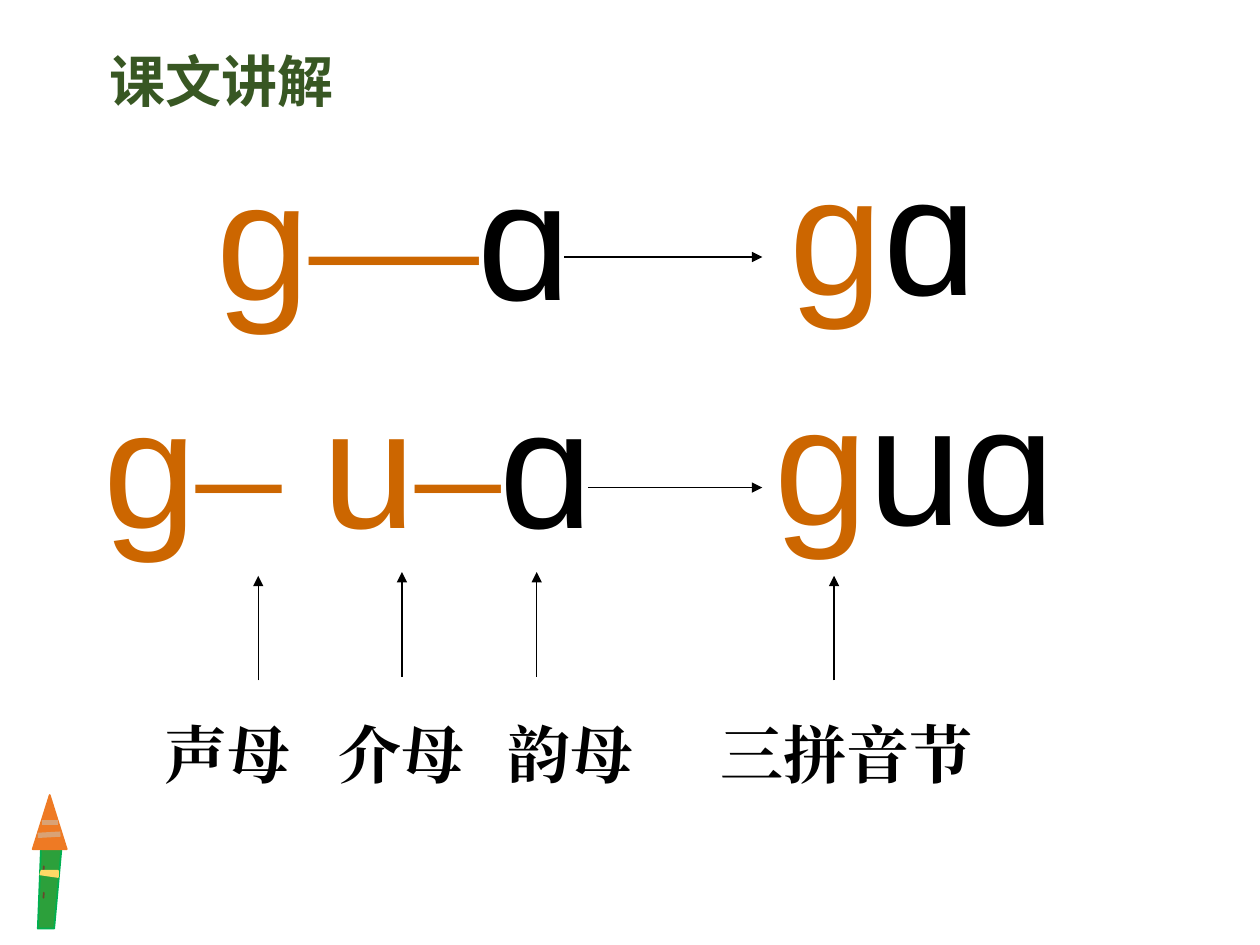
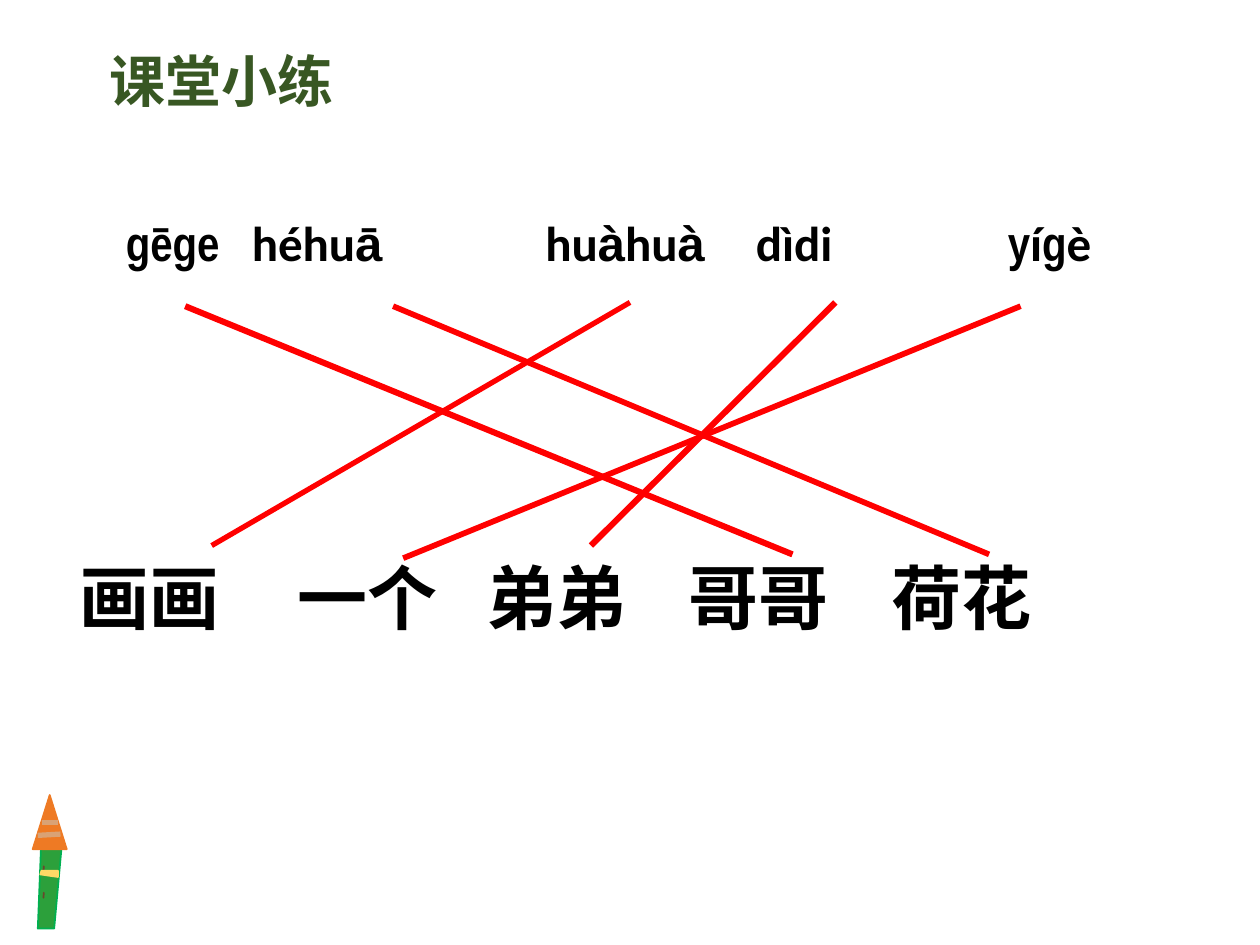
from lxml import etree
from pptx import Presentation
from pptx import util as u
from pptx.dml.color import RGBColor
from pptx.enum import shapes as s
from pptx.oxml import ns

HUE = {
    "title": "385723", "ink": "000000", "sound": "CC6600", "match": "FF0000",
    "body": "2CA03B", "edge": "00B050", "tip": "EE7A24", "mark": "69482C",
    "band": "FFD966", "wood": "D9A275",
}
SANS, SERIF, HAN = "Arial", "Times New Roman", "Noto Sans CJK SC"
THIN, SOFT = "Arial Narrow", "Calibri"

TITLE = {"size": u.Pt(32), "bold": True}
SOUND = {"size": u.Pt(96)}
LABEL = {"size": u.Pt(36), "bold": True}
PINYIN = {"size": u.Pt(28), "bold": True}
WORD = {"size": u.Pt(40), "bold": True}


def color(name):
    return RGBColor.from_string(HUE[name])


def add_text(slide, left, top, width, height, runs, style):
    """Write one line of text; runs holds (text, font, colour) triples."""
    box = slide.shapes.add_textbox(*map(u.Inches, (left, top, width, height)))
    box.text_frame.word_wrap = True
    line = box.text_frame.paragraphs[0]
    for words, face, hue in runs:
        run = line.add_run()
        run.text = words
        for key, value in {**style, "name": face}.items():
            setattr(run.font, key, value)
        run.font.color.rgb = color(hue)
        asian = etree.SubElement(run._r.get_or_add_rPr(), ns.qn("a:ea"))
        asian.set("typeface", face)


def add_line(slide, start, end, hue, width, arrow=False):
    ends = map(u.Inches, (*start, *end))
    link = slide.shapes.add_connector(s.MSO_CONNECTOR.STRAIGHT, *ends)
    link.line.color.rgb = color(hue)
    link.line.width = u.Pt(width)
    if arrow:
        head = etree.SubElement(link.line._get_or_add_ln(), ns.qn("a:tailEnd"))
        head.set("type", "triangle")
    etree.SubElement(link._element.spPr, ns.qn("a:effectLst"))


def paint(shape, fill, edge):
    shape.shadow.inherit = False
    shape.fill.solid()
    shape.fill.fore_color.rgb = color(fill)
    shape.line.color.rgb = color(edge)
    shape.line.width = u.Pt(1)


def add_outline(slide, points, fill, edge):
    first, *rest = [(u.Inches(x), u.Inches(y)) for x, y in points]
    pen = slide.shapes.build_freeform(*first)
    pen.add_line_segments(rest, close=True)
    paint(pen.convert_to_shape(), fill, edge)


def add_preset(slide, kind, left, top, width, height, hue):
    box = map(u.Inches, (left, top, width, height))
    shape = slide.shapes.add_shape(kind, *box)
    paint(shape, hue, hue)
    return shape


def add_mark(slide, top):
    mark = add_preset(slide, s.MSO_SHAPE.CHORD, 0.26, top, 0.26, 0.09, "mark")
    mark.rotation = 90
    for spot, angle in enumerate((89.45, 132.13)):
        mark.adjustments[spot] = angle * 0.6  # 60000 units a degree


def add_crayon(slide):
    body = [(0.33, 6.61), (0.49, 6.71), (0.43, 7.37), (0.3, 7.37)]
    band = [(0.33, 6.91), (0.46, 6.91), (0.46, 6.96), (0.32, 6.94)]
    add_outline(slide, body, "body", "edge")
    add_preset(slide, s.MSO_SHAPE.ISOSCELES_TRIANGLE,
               0.26, 6.31, 0.27, 0.43, "tip")
    add_mark(slide, 6.87)
    add_outline(slide, band, "band", "band")
    add_mark(slide, 7.08)
    add_line(slide, (0.33, 6.53), (0.46, 6.53), "wood", 3)
    add_line(slide, (0.3, 6.63), (0.48, 6.62), "wood", 3)


def add_page(deck, title):
    slide = deck.slides.add_slide(deck.slide_layouts[6])
    add_crayon(slide)
    add_text(slide, 0.77, 0.32, 2.4, 0.64, [(title, HAN, "title")], TITLE)
    return slide


def add_lesson(deck):
    slide = add_page(deck, "课文讲解")
    lead, final = ("ɡ", SANS, "sound"), ("ɑ", SANS, "ink")
    dash = ("–", SERIF, "sound")
    sums = [
        (1.62, 1, 3.4, [lead, ("—", SERIF, "sound"), final]),
        (0.72, 2.81, 4.8, [lead, ("– ", SERIF, "sound"),
                           ("u", SANS, "sound"), dash, final]),
        (6.17, 0.96, 2.2, [lead, final]),
        (6.05, 2.79, 2.9, [lead, ("uɑ", SANS, "ink")]),
    ]
    for left, top, width, runs in sums:
        add_text(slide, left, top, width, 1.72, runs, SOUND)

    labels = [(1.21, "声母"), (2.59, "介母"), (3.93, "韵母"), (5.62, "三拼音节")]
    for left, name in labels:
        width = len(name) * 0.5 + 0.3
        add_text(slide, left, 5.63, width, 0.71, [(name, SERIF, "ink")], LABEL)

    for left, y in [(4.48, 2.04), (4.67, 3.87)]:
        add_line(slide, (left, y), (6.05, y), "ink", 0.75, True)
    for x, foot in [(2.05, 5.4), (3.19, 5.37), (4.26, 5.37), (6.62, 5.4)]:
        add_line(slide, (x, foot), (x, foot - 0.83), "ink", 0.75, True)


def add_drill(deck):
    slide = add_page(deck, "课堂小练")
    pinyin = [
        (0.9, [("gēge", THIN)]),
        (1.9, [("héhu", SOFT), ("ā", SANS)]),
        (4.23, [("hu", SOFT), ("à", SANS), ("hu", SOFT), ("à", SANS)]),
        (5.9, [("dìdi", SOFT)]),
        (7.9, [("y", THIN), ("í", SOFT), ("g", THIN), ("è", SOFT)]),
    ]
    for left, parts in pinyin:
        runs = [(*part, "ink") for part in parts]
        add_text(slide, left, 1.64, 1.65, 0.57, runs, PINYIN)

    words = [(0.53, "画画"), (2.26, "一个"), (3.76, "弟弟"),
             (5.37, "哥哥"), (6.98, "荷花")]
    for left, word in words:
        add_text(slide, left, 4.35, 1.5, 0.77, [(word, HAN, "ink")], WORD)

    pairs = [
        ((1.68, 4.33), (5, 2.4), 3),
        ((7.85, 4.4), (3.12, 2.43), 3.25),
        ((4.69, 4.33), (6.63, 2.4), 3.5),
        ((6.29, 4.4), (1.47, 2.43), 3.5),
        ((3.2, 4.43), (8.1, 2.43), 3.25),
    ]
    for start, end, width in pairs:
        add_line(slide, start, end, "match", width)


def main():
    deck = Presentation()
    deck.slide_width, deck.slide_height = u.Inches(10), u.Inches(7.5)
    add_lesson(deck)
    add_drill(deck)
    deck.save("out.pptx")


if __name__ == "__main__":
    main()
